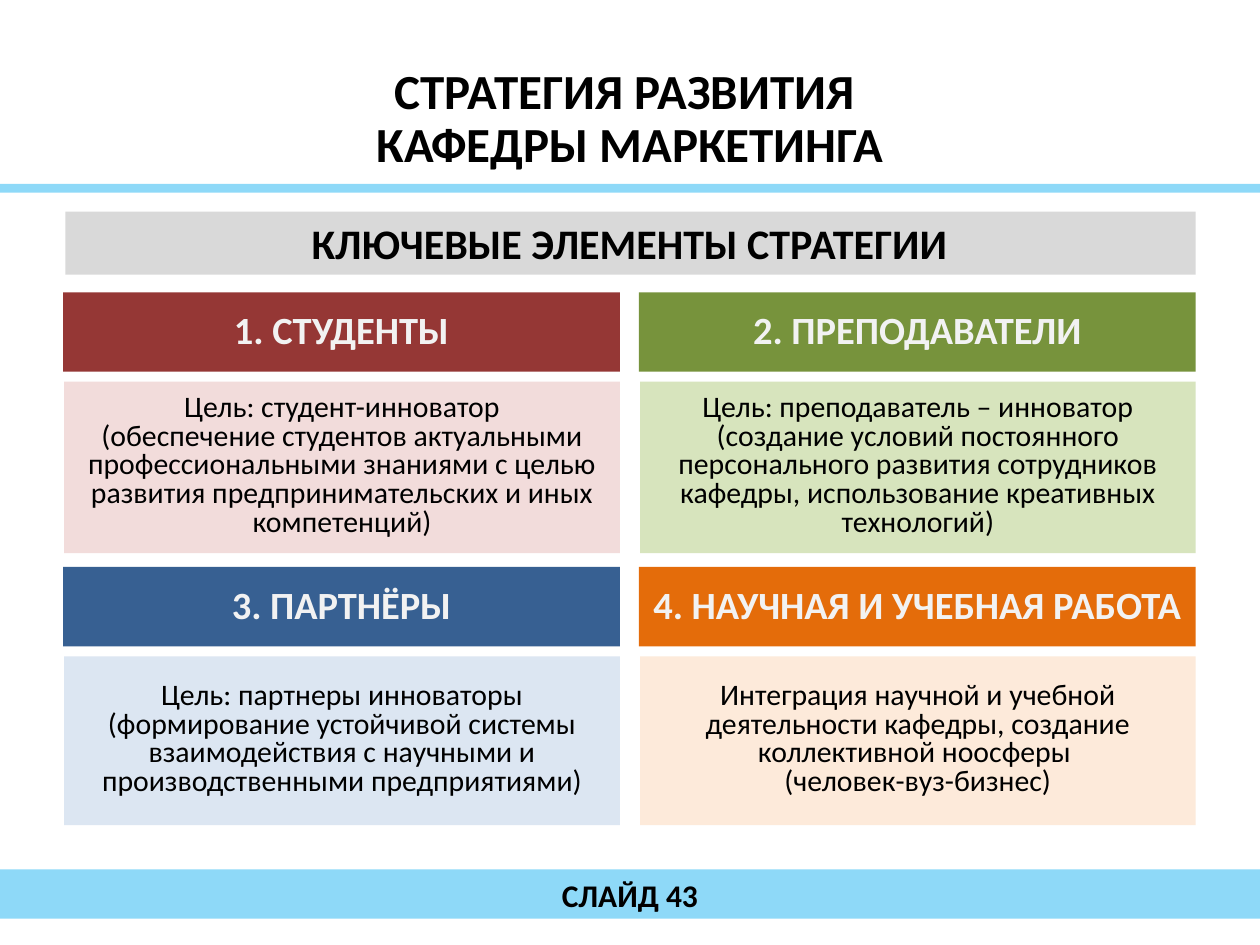
"""Builds the slide on the development strategy of the marketing department."""
from pptx import Presentation
from pptx.dml.color import RGBColor
from pptx.enum import shapes, text
from pptx.util import Inches, Pt

TITLE = "СТРАТЕГИЯ РАЗВИТИЯ \vКАФЕДРЫ МАРКЕТИНГА"
SUBTITLE = "КЛЮЧЕВЫЕ ЭЛЕМЕНТЫ СТРАТЕГИИ"
FOOTER = "СЛАЙД 43"
CARDS = [
    ("1. СТУДЕНТЫ", "953735", "F2DCDB", 5,
     ["Цель: студент-инноватор",
      "(обеспечение студентов актуальными профессиональными знаниями "
      "с целью развития предпринимательских и иных компетенций)"]),
    ("2. ПРЕПОДАВАТЕЛИ", "77933C", "D7E4BD", 5,
     ["Цель: преподаватель – инноватор",
      "(создание условий постоянного персонального развития сотрудников "
      "кафедры, использование креативных технологий)"]),
    ("3. ПАРТНЁРЫ", "376092", "DCE6F2", 4,
     ["Цель: партнеры инноваторы (формирование устойчивой системы "
      "взаимодействия с научными и производственными предприятиями)"]),
    ("4. НАУЧНАЯ И УЧЕБНАЯ РАБОТА", "E46C0A", "FDEADA", 4,
     ["Интеграция научной и учебной деятельности кафедры, создание "
      "коллективной ноосферы \v(человек-вуз-бизнес)"]),
]
BLACK, PALE, SKY, GREY = "000000", "F2F2F2", "8ED9F8", "D9D9D9"
LEFTS, CARD_W, HEAD_H = (0.5, 5.07), 4.42, 0.63
ROWS = ((2.32, 1.36), (4.5, 1.34))
BODY_DROP, LINE_H = 0.71, 0.23


def rgb(value):
    return RGBColor.from_string(value)


def add_rect(s, box, fill):
    sp = s.shapes.add_shape(shapes.MSO_SHAPE.RECTANGLE, *map(Inches, box))
    sp.shadow.inherit = False
    sp.fill.solid()
    sp.fill.fore_color.rgb = rgb(fill)
    sp.line.fill.background()


def add_text(s, box, lines, size, color=BLACK, bold=True, spacing=1.0,
             anchor=text.MSO_ANCHOR.TOP):
    tf = s.shapes.add_textbox(*map(Inches, box)).text_frame
    tf.word_wrap = True
    tf.vertical_anchor = anchor
    for i, line in enumerate(lines):
        p = tf.add_paragraph() if i else tf.paragraphs[0]
        p.text = line
        p.alignment = text.PP_ALIGN.CENTER
        p.line_spacing = spacing
        p.font.name = "Calibri"
        p.font.size = Pt(size)
        p.font.bold = bold
        p.font.color.rgb = rgb(color)


def add_card(s, left, top, body_h, card):
    heading, dark, light, line_count, lines = card
    add_rect(s, (left, top, CARD_W, HEAD_H), dark)
    add_text(s, (left, top + 0.06, CARD_W, 0.47), [heading], 22, PALE)
    body_top = top + BODY_DROP
    add_rect(s, (left + 0.01, body_top, CARD_W - 0.01, body_h), light)
    text_h = 0.1 + LINE_H * line_count
    text_top = body_top + (body_h - text_h) / 2
    add_text(s, (left + 0.08, text_top, 4.27, text_h), lines, 17,
             bold=False, spacing=0.8)


def main():
    prs = Presentation()
    prs.slide_width, prs.slide_height = Inches(10), Inches(7.5)
    s = prs.slides.add_slide(prs.slide_layouts[6])
    middle = text.MSO_ANCHOR.MIDDLE
    add_text(s, (0, 0.52, 10, 0.87), [TITLE], 28, spacing=0.9, anchor=middle)
    add_rect(s, (0, 1.46, 10, 0.07), SKY)
    add_rect(s, (0.52, 1.68, 8.97, 0.5), GREY)
    add_text(s, (0.51, 1.68, 8.97, 0.5), [SUBTITLE], 24)
    for i, card in enumerate(CARDS):
        row, col = divmod(i, 2)
        add_card(s, LEFTS[col], *ROWS[row], card)
    add_rect(s, (0, 6.9, 10, 0.39), SKY)
    add_text(s, (0, 6.9, 10, 0.4), [FOOTER], 18, anchor=middle)
    prs.save("out.pptx")


if __name__ == "__main__":
    main()
